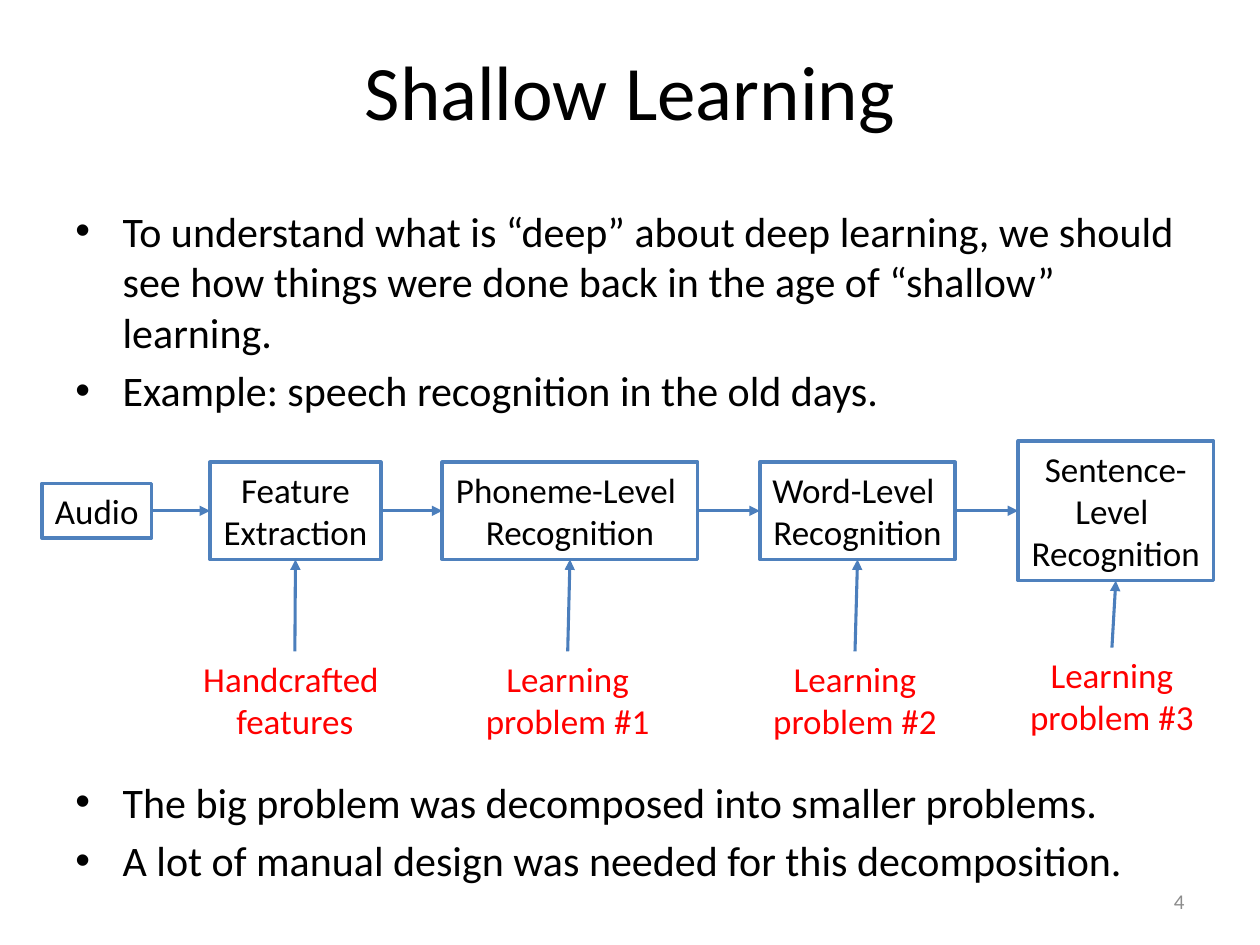
import pptx
import pptx.util
import pptx.dml.color
import pptx.enum.shapes
import pptx.enum.text
import pptx.oxml.ns
import lxml.etree
from dataclasses import dataclass

Pt = pptx.util.Pt
Align = pptx.enum.text.PP_ALIGN
Anchor = pptx.enum.text.MSO_ANCHOR
qn = pptx.oxml.ns.qn


@dataclass
class Theme:
    font: str = "Calibri"
    ink: str = "000000"
    note: str = "FF0000"
    edge: str = "4F81BD"
    arrow: str = "4B7EBC"
    page: str = "8C8C8C"
    title: int = 44
    body: int = 24
    label: int = 20
    foot: int = 12


theme = Theme()

TITLE = "Shallow Learning"
PAGE = "4"
BULLETS = [
    (113.76, 195, [
        "To understand what is “deep” about deep learning, we should see how "
        "things were done back in the age of “shallow” learning.",
        "Example: speech recognition in the old days.",
    ]),
    (440, 72, [
        "The big problem was decomposed into smaller problems.",
        "A lot of manual design was needed for this decomposition.",
    ]),
]
STAGES = [
    ("Audio", 24, 62.6, 1, False),
    ("Feature\nExtraction", 120, 97.7, 2, False),
    ("Phoneme-Level \nRecognition", 252.72, 146, 2, False),
    ("Word-Level \nRecognition", 434.2, 111.6, 2, False),
    ("Sentence-Level \nRecognition", 581.8, 111.6, 3, True),
]
NOTES = [
    ("Handcrafted \nfeatures", 108, 121, 372.2),
    ("Learning\nproblem #1", 270, 108.8, 372.2),
    ("Learning\nproblem #2", 434.2, 108.8, 372.2),
    ("Learning\nproblem #3", 581, 108.8, 370.1),
]
ROW_MID = 291.9
LINE = 24.2
PAD = 7.2
TOP, LEFT, BOTTOM, RIGHT = range(4)


def color(code):
    return pptx.dml.color.RGBColor.from_string(code)


def style(par, size, ink, align):
    par.alignment = align
    for run in par.runs:
        run.font.name = theme.font
        run.font.size = Pt(size)
        run.font.color.rgb = color(ink)


def write(shape, text, size, ink, align, wrap=True, anchor=Anchor.TOP):
    frame = shape.text_frame
    frame.word_wrap = wrap
    frame.vertical_anchor = anchor
    par = frame.paragraphs[0]
    par.text = text
    style(par, size, ink, align)


def add_text(slide, left, top, width, height):
    return slide.shapes.add_textbox(Pt(left), Pt(top), Pt(width), Pt(height))


def add_list(slide, top, height, items):
    frame = add_text(slide, 36, top, 648, height).text_frame
    frame.word_wrap = True
    for i, item in enumerate(items):
        par = frame.add_paragraph() if i else frame.paragraphs[0]
        par.text = item
        par.space_before = Pt(4.8)
        style(par, theme.body, theme.ink, Align.LEFT)
        props = par._p.get_or_add_pPr()
        props.set("marL", str(Pt(27)))
        props.set("indent", str(-Pt(27)))
        lxml.etree.SubElement(props, qn("a:buFont")).set("typeface", "Arial")
        lxml.etree.SubElement(props, qn("a:buChar")).set("char", "•")


def add_stage(slide, text, left, width, lines, wrap):
    height = lines * LINE + PAD
    box = slide.shapes.add_shape(
        pptx.enum.shapes.MSO_SHAPE.RECTANGLE,
        Pt(left), Pt(ROW_MID - height / 2), Pt(width), Pt(height))
    box.shadow.inherit = False
    box.fill.background()
    box.line.color.rgb = color(theme.edge)
    box.line.width = Pt(2)
    write(box, text, theme.label, theme.ink, Align.CENTER, wrap, Anchor.MIDDLE)
    return box


def add_note(slide, text, left, width, top):
    box = add_text(slide, left, top, width, 2 * LINE + PAD)
    write(box, text, theme.label, theme.note, Align.CENTER, False)
    return box


def add_arrow(slide, start, out, end, into):
    line = slide.shapes.add_connector(
        pptx.enum.shapes.MSO_CONNECTOR.STRAIGHT, 0, 0, 0, 0)
    line.begin_connect(start, out)
    line.end_connect(end, into)
    line.line.color.rgb = color(theme.arrow)
    line.line.width = Pt(1.75)
    tip = lxml.etree.SubElement(line.line._get_or_add_ln(), qn("a:tailEnd"))
    tip.set("type", "triangle")
    lxml.etree.SubElement(line._element.spPr, qn("a:effectLst"))


def main():
    deck = pptx.Presentation()
    deck.slide_width, deck.slide_height = Pt(720), Pt(540)
    slide = deck.slides.add_slide(deck.slide_layouts[5])

    title = slide.shapes.title
    title.left, title.top, title.width, title.height = map(Pt, (36, 12.24, 648, 78))
    write(title, TITLE, theme.title, theme.ink, Align.CENTER, anchor=Anchor.MIDDLE)

    for block in BULLETS:
        add_list(slide, *block)

    stages = [add_stage(slide, *item) for item in STAGES]
    notes = [add_note(slide, *item) for item in NOTES]
    for start, end in zip(stages, stages[1:]):
        add_arrow(slide, start, RIGHT, end, LEFT)
    for note, stage in zip(notes, stages[1:]):
        add_arrow(slide, note, TOP, stage, BOTTOM)

    page = add_text(slide, 516, 500.5, 168, 28.75)
    write(page, PAGE, theme.foot, theme.page, Align.RIGHT, anchor=Anchor.MIDDLE)

    deck.save("out.pptx")


if __name__ == "__main__":
    main()
